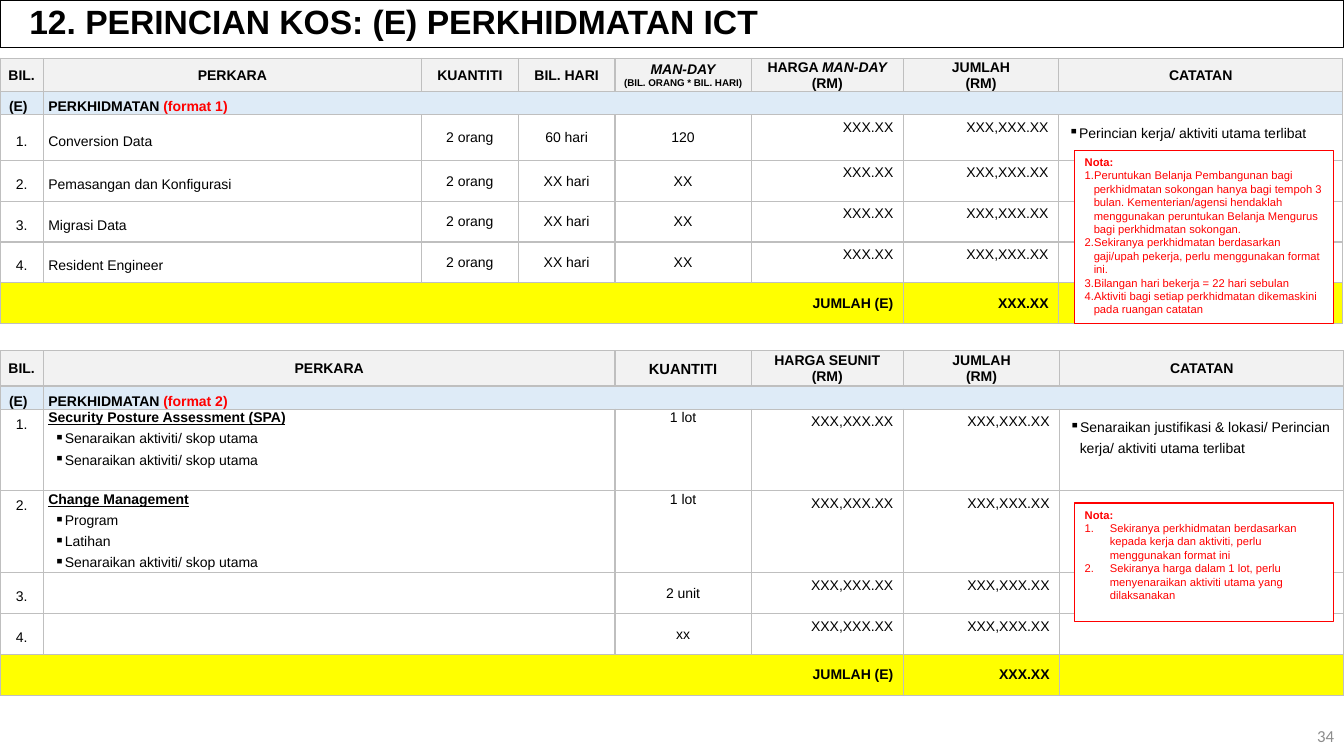
from lxml import etree
from pptx import Presentation
from pptx.dml.color import RGBColor
from pptx.enum.shapes import MSO_SHAPE
from pptx.enum.text import MSO_ANCHOR, PP_ALIGN
from pptx.oxml.ns import qn
from pptx.util import Inches, Pt

LEFT, CENTER, RIGHT = PP_ALIGN.LEFT, PP_ALIGN.CENTER, PP_ALIGN.RIGHT
TOP, MIDDLE = MSO_ANCHOR.TOP, MSO_ANCHOR.MIDDLE
BLACK, RED, GRID = "000000", "FF0000", "BFBFBF"
HEAD_FILL, SECTION_FILL, TOTAL_FILL = "F2F2F2", "DEEBF7", "FFFF00"

# Content: a cell is a list of paragraphs, a paragraph a list of (text, style) runs.
# Styles: b bold, i italic, u underline, r red, s small, l large; * marks a bullet.
TITLE = "12. PERINCIAN KOS: (E) PERKHIDMATAN ICT"
PAGE = "34"
RM = [("(RM)", "b")]


def plain(text, style=""):
    return [[(text, style)]]


def section(name):
    return [plain("(E)", "b"), [[("PERKHIDMATAN ", "b"), (name, "br")]]] + [None] * 6


def item(number, name, *values, remark=None):
    """One body row; name is a cell, values are plain strings."""
    return [plain(number), name] + [v and plain(v) for v in values] + [remark]


def heading(name, *points):
    return plain(name, "bu") + [[(point, "*")] for point in points]


JUMLAH = [[("JUMLAH", "b")], RM]
TOTAL = [None] * 5 + [plain("JUMLAH (E)", "b"), plain("XXX.XX", "b"), None]
PRICE, AMOUNT = "XXX.XX", "XXX,XXX.XX"
SCOPE = "Senaraikan aktiviti/ skop utama"

FORMAT_1 = [
    [plain("BIL.", "b"), plain("PERKARA", "b"), plain("KUANTITI", "b"), plain("BIL. HARI", "b"),
     [[("MAN-DAY", "bi")], [("(BIL. ORANG * BIL. HARI)", "bs")]],
     [[("HARGA ", "b"), ("MAN-DAY", "bi")], RM], JUMLAH, plain("CATATAN", "b")],
    section("(format 1)"),
    item("1.", plain("Conversion Data"), "2 orang", "60 hari", "120", PRICE, AMOUNT,
         remark=plain("Perincian kerja/ aktiviti utama terlibat", "*")),
    item("2.", plain("Pemasangan dan Konfigurasi"), "2 orang", "XX hari", "XX", PRICE, AMOUNT),
    item("3.", plain("Migrasi Data"), "2 orang", "XX hari", "XX", PRICE, AMOUNT),
    item("4.", plain("Resident Engineer"), "2 orang", "XX hari", "XX", PRICE, AMOUNT),
    TOTAL,
]
FORMAT_2 = [
    [plain("BIL.", "b"), plain("PERKARA", "b"), None, None, plain("KUANTITI", "bl"),
     [[("HARGA SEUNIT", "b")], RM], JUMLAH, plain("CATATAN", "b")],
    section("(format 2)"),
    item("1.", heading("Security Posture Assessment (SPA)", SCOPE, SCOPE),
         None, None, "1 lot", AMOUNT, AMOUNT,
         remark=plain("Senaraikan justifikasi & lokasi/ Perincian kerja/ aktiviti utama terlibat", "*")),
    item("2.", heading("Change Management", "Program", "Latihan", SCOPE),
         None, None, "1 lot", AMOUNT, AMOUNT),
    item("3.", None, None, None, "2 unit", AMOUNT, AMOUNT),
    item("4.", None, None, None, "xx", AMOUNT, AMOUNT),
    TOTAL,
]
# rows, top, width of JUMLAH column, row heights, rows merged over columns 1-3, top-anchored rows
TABLES = [
    (FORMAT_1, 0.58, 1.54, [0.33, 0.23, 0.45] + [0.405] * 4, (), ()),
    (FORMAT_2, 3.48, 1.55, [0.35, 0.23, 0.81, 0.81] + [0.4] * 3, (0, 2, 3, 4, 5), (2, 3)),
]
# top, height, hanging indent, numbered points
NOTES = [
    (1.49, 1.72, 0.09, [
        "Peruntukan Belanja Pembangunan bagi perkhidmatan sokongan hanya bagi tempoh 3 bulan. "
        "Kementerian/agensi hendaklah menggunakan peruntukan Belanja Mengurus bagi perkhidmatan sokongan.",
        "Sekiranya perkhidmatan berdasarkan gaji/upah pekerja, perlu menggunakan format ini.",
        "Bilangan hari bekerja = 22 hari sebulan",
        "Aktiviti bagi setiap perkhidmatan dikemaskini pada ruangan catatan"]),
    (4.99, 1.18, 0.25, [
        "Sekiranya perkhidmatan berdasarkan kepada kerja dan aktiviti, perlu menggunakan format ini",
        "Sekiranya harga dalam 1 lot, perlu menyenaraikan aktiviti utama yang dilaksanakan"]),
]


def rgb(color):
    return RGBColor.from_string(color)


def set_font(r, size, color, bold=False, name="Arial"):
    r.font.name, r.font.size, r.font.bold = name, Pt(size), bold
    r.font.color.rgb = rgb(color)


def indent(p, left, first=0.0):
    pPr = p._p.get_or_add_pPr()
    pPr.set("marL", str(Inches(left)))
    pPr.set("indent", str(Inches(first)))
    return pPr


def border(cell, sides, hidden):
    tcPr = cell._tc.get_or_add_tcPr()
    for side in sides:
        ln = etree.SubElement(tcPr, qn("a:ln" + side), w=str(Pt(1)))
        if side in hidden:
            etree.SubElement(ln, qn("a:noFill"))
        else:
            fill = etree.SubElement(ln, qn("a:solidFill"))
            etree.SubElement(fill, qn("a:srgbClr"), val=GRID)


def write_cell(cell, paragraphs, align, spacing, left):
    tf = cell.text_frame
    for i, runs in enumerate(paragraphs):
        p = tf.paragraphs[0] if i == 0 else tf.add_paragraph()
        p.alignment = align
        if "*" in runs[0][1]:
            p.line_spacing = Pt(15.1)
            pPr = indent(p, 0.1, 0 if i else -0.1)
            etree.SubElement(pPr, qn("a:buChar"), char="▪")
        else:
            if spacing:
                p.line_spacing = Pt(spacing)
            if left:
                indent(p, left)
        for text, style in runs:
            r = p.add_run()
            r.text = text
            size = 7 if "s" in style else 10.5 if "l" in style else 10
            set_font(r, size, RED if "r" in style else BLACK, "b" in style)
            r.font.italic, r.font.underline = "i" in style, "u" in style


def add_cost_table(s, rows, top, amount_width, heights, merged, top_rows):
    widths = [0.43, 3.75, 0.96, 0.96, 1.35, 1.51, amount_width, 2.82]
    table = s.shapes.add_table(len(rows), len(widths), 0, Inches(top),
                               Inches(sum(widths)), Inches(sum(heights))).table
    table.first_row = table.horz_banding = False
    for column, width in zip(table.columns, widths):
        column.width = Inches(width)
    for row, height in zip(table.rows, heights):
        row.height = Inches(height)
    last = len(rows) - 1
    for y, row in enumerate(rows):
        fill = {0: HEAD_FILL, 1: SECTION_FILL, last: TOTAL_FILL}.get(y)
        for x, paragraphs in enumerate(row):
            cell = table.cell(y, x)
            # The total row shows no lines between its first six cells
            hidden = ("L" if 0 < x < 6 else "") + ("R" if x < 5 else "") if y == last else ""
            border(cell, "LRTB", hidden)
            if fill:
                cell.fill.solid()
                cell.fill.fore_color.rgb = rgb(fill)
            else:
                cell.fill.background()
            money = 1 < y and x > 4
            cell.vertical_anchor = TOP if y in top_rows or (money and y < last) else MIDDLE
            if not money:
                cell.margin_left = cell.margin_right = cell.margin_top = Inches(0.01)
                cell.margin_bottom = 0
            if not paragraphs:
                continue
            align, spacing, left = CENTER, None, 0
            if y == 1:
                align, spacing, left = LEFT, 15.7, 0.04 if x else 0.08
            elif y > 1 and x == 0:
                spacing = 15.7
            elif y > 1 and x == 1:
                align, spacing, left = LEFT, None if y in top_rows else 15.7, 0.04
            elif money:
                align = LEFT if x == 7 else RIGHT
            write_cell(cell, paragraphs, align, spacing, left)
    table.cell(1, 1).merge(table.cell(1, 7))
    for y in merged:
        table.cell(y, 1).merge(table.cell(y, 3))


def add_note(s, top, height, hang, points):
    box = s.shapes.add_shape(MSO_SHAPE.RECTANGLE, Inches(10.66), Inches(top), Inches(2.57), Inches(height))
    box.shadow.inherit = False
    box.fill.solid()
    box.fill.fore_color.rgb = rgb("FFFFFF")
    box.line.color.rgb = rgb(RED)
    box.line.width = Pt(0.75)
    tf = box.text_frame
    tf.word_wrap, tf.vertical_anchor = True, TOP
    for i, text in enumerate(["Nota:"] + points):
        p = tf.paragraphs[0] if i == 0 else tf.add_paragraph()
        p.text = text
        p.alignment = LEFT
        if i:
            etree.SubElement(indent(p, hang, -hang), qn("a:buAutoNum"), type="arabicPeriod")
        set_font(p.runs[0], 8, RED, i == 0)


prs = Presentation()
prs.slide_width, prs.slide_height = Inches(13.33), Inches(7.5)
s = prs.slides.add_slide(prs.slide_layouts[5])

# Title bar
title = s.shapes.title
title.left, title.top, title.width, title.height = 0, 0, Inches(13.33), Inches(0.47)
title.line.color.rgb = rgb(BLACK)
title.line.width = Pt(0.75)
title.text_frame.text = TITLE
title.text_frame.vertical_anchor = MIDDLE
p = title.text_frame.paragraphs[0]
p.alignment, p.line_spacing = LEFT, 0.9
indent(p, 0.19)
set_font(p.runs[0], 24, BLACK, True)

# Cost tables, each with its note on top
for table, note in zip(TABLES, NOTES):
    add_cost_table(s, *table)
    add_note(s, *note)

# Page number
tf = s.shapes.add_textbox(Inches(10.33), Inches(7.1), Inches(3), Inches(0.4)).text_frame
tf.word_wrap, tf.vertical_anchor = True, MIDDLE
tf.text = PAGE
tf.paragraphs[0].alignment = RIGHT
set_font(tf.paragraphs[0].runs[0], 12, "8C8C8C", name="Calibri")

prs.save("out.pptx")
